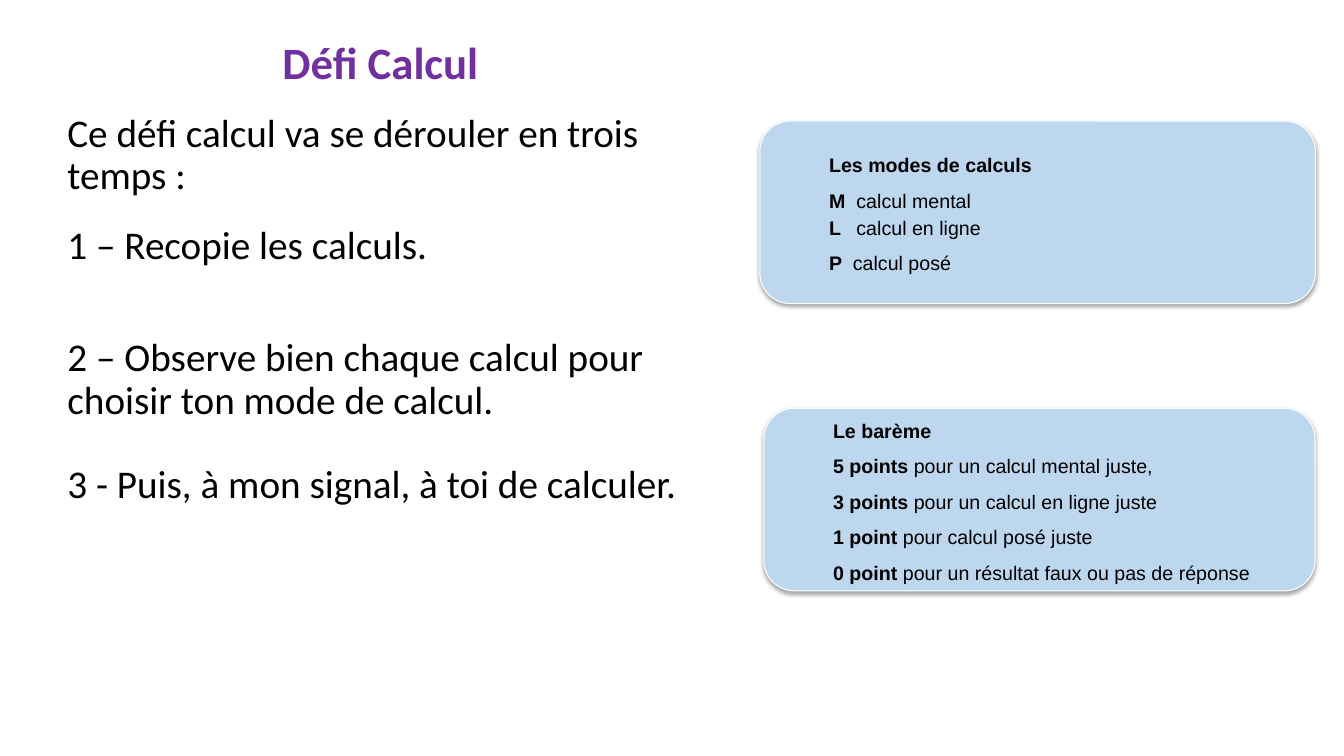
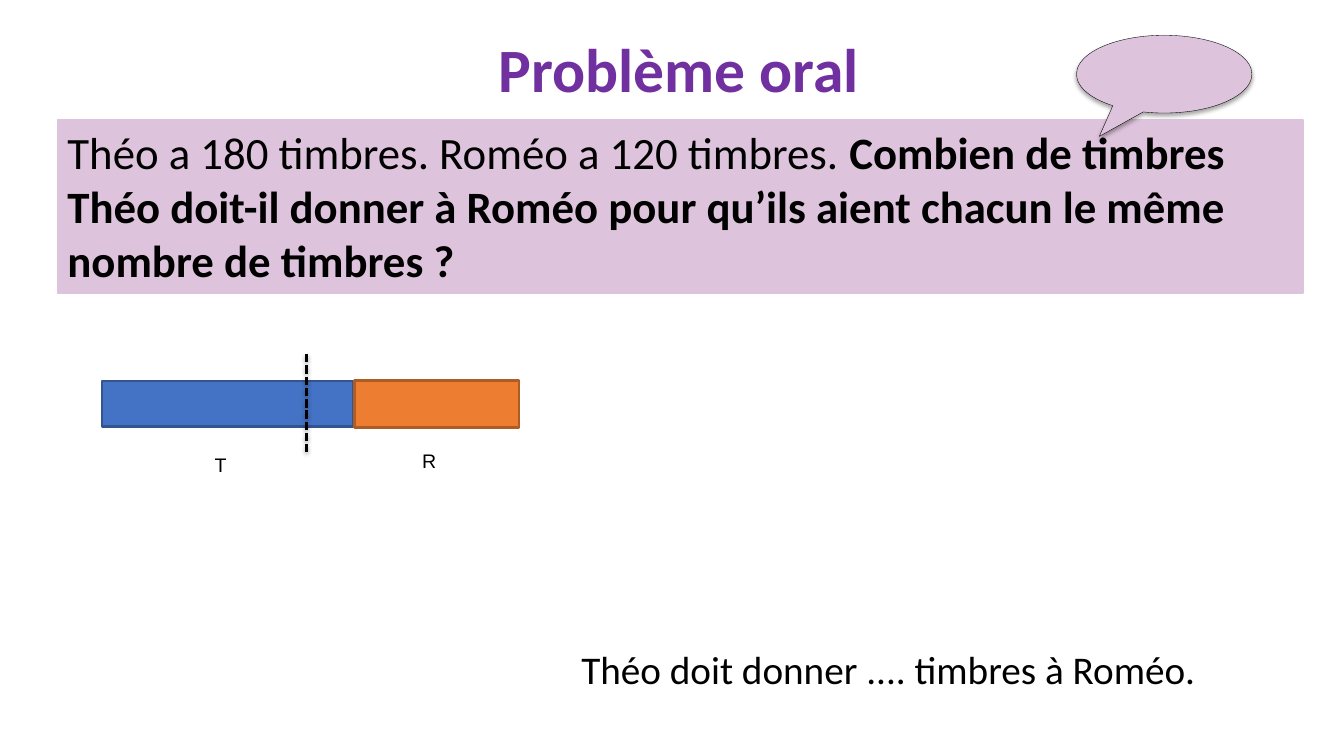
from lxml import etree
from pptx import Presentation
from pptx.dml.color import RGBColor
from pptx.enum.dml import MSO_LINE
from pptx.enum.shapes import MSO_CONNECTOR, MSO_SHAPE
from pptx.enum.text import MSO_ANCHOR, MSO_AUTO_SIZE, PP_ALIGN
from pptx.oxml.ns import qn
from pptx.util import Cm, Pt

RECT = MSO_SHAPE.RECTANGLE
ROUNDED = MSO_SHAPE.ROUNDED_RECTANGLE
CALLOUT = MSO_SHAPE.OVAL_CALLOUT
STRAIGHT = MSO_CONNECTOR.STRAIGHT
DASHED = MSO_LINE.SQUARE_DOT
TOP, MIDDLE = MSO_ANCHOR.TOP, MSO_ANCHOR.MIDDLE
LEFT, CENTER = PP_ALIGN.LEFT, PP_ALIGN.CENTER
NO_FIT = MSO_AUTO_SIZE.NONE

BLACK, WHITE, PURPLE = "000000", "FFFFFF", "7030A0"
PINK, SKY = "DEC3DC", "BDD7EE"
BLUE, DARK_BLUE = "4472C4", "325491"
ORANGE, DARK_ORANGE = "ED7D31", "AF5C24"
HEAD_FONT, LABEL_FONT = "Calibri", "Arial"


def rgb(color):
    return RGBColor.from_string(color)


def write(tf, text, size=28, font=HEAD_FONT, color=BLACK, align=LEFT,
          spacing=1.0, before=0, indent=0, hang=0):
    """Add a paragraph; parts between asterisks are bold."""
    p = tf.paragraphs[0]
    if p.runs:
        p = tf.add_paragraph()
    p.alignment, p.line_spacing, p.space_before = align, spacing, Pt(before)
    if indent:
        pPr = p._p.get_or_add_pPr()
        pPr.set("marL", str(Cm(indent + hang)))
        pPr.set("indent", str(-Cm(hang)))
    for i, part in enumerate(text.split("*")):
        if part:
            r = p.add_run()
            r.text = part
            r.font.name, r.font.size, r.font.bold = font, Pt(size), i % 2 == 1
            r.font.color.rgb = rgb(color)


def set_shadow(sp, on):
    """Give a soft shadow below the shape, or none; call after its line is set."""
    effects = etree.SubElement(sp._element.spPr, qn("a:effectLst"))
    if on:
        outer = etree.SubElement(effects, qn("a:outerShdw"), blurRad=str(Pt(3.1)),
                                 dist=str(Pt(1.8)), dir="5400000", rotWithShape="0")
        tone = etree.SubElement(outer, qn("a:srgbClr"), val=BLACK)
        etree.SubElement(tone, qn("a:alpha"), val="35000")


class Deck:
    def __init__(self):
        self.prs = Presentation()
        self.prs.slide_width, self.prs.slide_height = Cm(33.87), Cm(19.05)
        self.s = None

    def slide(self, title, x, y, w, h, **fmt):
        self.s = self.prs.slides.add_slide(self.prs.slide_layouts[5])
        sp = self.s.shapes.title
        sp.left, sp.top, sp.width, sp.height = Cm(x), Cm(y), Cm(w), Cm(h)
        tf = sp.text_frame
        tf.auto_size, tf.vertical_anchor = NO_FIT, MIDDLE
        write(tf, f"*{title}*", color=PURPLE, **fmt)

    def text(self, x, y, w, h, text="", **fmt):
        tf = self.s.shapes.add_textbox(Cm(x), Cm(y), Cm(w), Cm(h)).text_frame
        tf.word_wrap = True
        if text:
            write(tf, text, **fmt)
        return tf

    def shape(self, kind, x, y, w, h, fill, line, width, shadow=False, anchor=TOP):
        sp = self.s.shapes.add_shape(kind, Cm(x), Cm(y), Cm(w), Cm(h))
        sp.fill.solid()
        sp.fill.fore_color.rgb = rgb(fill)
        sp.line.color.rgb, sp.line.width = rgb(line), Pt(width)
        set_shadow(sp, shadow)
        sp.text_frame.word_wrap, sp.text_frame.vertical_anchor = True, anchor
        return sp

    def card(self, x, y, w, h, lines):
        """Rounded panel; each line is (text, space before, hanging indent)."""
        sp = self.shape(ROUNDED, x, y, w, h, SKY, WHITE, 0.75, True, MIDDLE)
        for text, before, hang in lines:
            write(sp.text_frame, text, size=14, font=LABEL_FONT, spacing=1.15,
                  before=before, indent=1.27, hang=hang)

    def dashed_line(self, x, top, bottom):
        line = self.s.shapes.add_connector(STRAIGHT, Cm(x), Cm(top), Cm(x), Cm(bottom))
        line.line.color.rgb, line.line.width = rgb(BLACK), Pt(2)
        line.line.dash_style = DASHED
        set_shadow(line, True)


def challenge_slide(deck):
    deck.slide("Défi Calcul", 6.86, 0.74, 6.43, 1.63, size=32)

    # Steps
    tf = deck.text(1.45, 2.74, 17.12, 15.44)
    for step, before in [("Ce défi calcul va se dérouler en trois temps :", 10),
                         ("1 – Recopie les calculs.", 19.5),
                         ("2 – Observe bien chaque calcul pour choisir ton mode de calcul.", 50),
                         ("3 - Puis, à mon signal, à toi de calculer.", 30)]:
        write(tf, step, spacing=0.9, before=before)

    # Scoring and methods
    scoring = ["*Le barème*",
               "*5 points* pour un calcul mental juste,",
               "*3 points* pour un calcul en ligne juste",
               "*1 point* pour calcul posé juste",
               "*0 point* pour un résultat faux ou pas de réponse"]
    deck.card(19.25, 10.29, 13.89, 4.6, [(text, 6, 0) for text in scoring])
    deck.card(19.15, 3.05, 14, 4.6, [("*Les modes de calculs*", 6, 0),
                                     ("*M*\tcalcul mental", 6, 0.69),
                                     ("*L*\tcalcul en ligne", 0, 0.69),
                                     ("*P*\tcalcul posé", 6, 0.6)])


def problem_slide(deck):
    deck.slide("Problème oral", 0.18, 0, 33.87, 3.68, size=44, align=CENTER, spacing=0.9)

    # Question and speech bubble
    banner = deck.shape(RECT, 1.45, 3.02, 31.39, 4.37, PINK, PINK, 1)
    write(banner.text_frame, "Théo a 180 timbres. Roméo a 120 timbres. *Combien de timbres "
          "Théo doit-il donner à Roméo pour qu’ils aient chacun le même "
          "nombre de timbres ?*", size=32)
    bubble = deck.shape(CALLOUT, 27.13, 0.89, 4.42, 1.96, PINK, BLACK, 0.25, True)
    bubble.adjustments[0], bubble.adjustments[1] = -0.37, 0.8

    # Answer
    deck.text(14.4, 16.13, 17.25, 1.45, "Théo doit donner .... timbres à Roméo.")

    # Bar model
    for name, bar, label, fill, line in [
            ("T", (2.57, 9.6, 6.35, 1.14), (5.16, 11.28, 1.78, 0.86), BLUE, DARK_BLUE),
            ("R", (8.94, 9.58, 4.14, 1.19), (10.39, 11.2, 1.63, 0.89), ORANGE, DARK_ORANGE)]:
        deck.shape(RECT, *bar, fill, line, 2)
        deck.text(*label, name, size=14, font=LABEL_FONT)
    deck.dashed_line(7.72, 8.92, 11.38)


def main():
    deck = Deck()
    challenge_slide(deck)
    problem_slide(deck)
    deck.prs.save("out.pptx")


if __name__ == "__main__":
    main()
